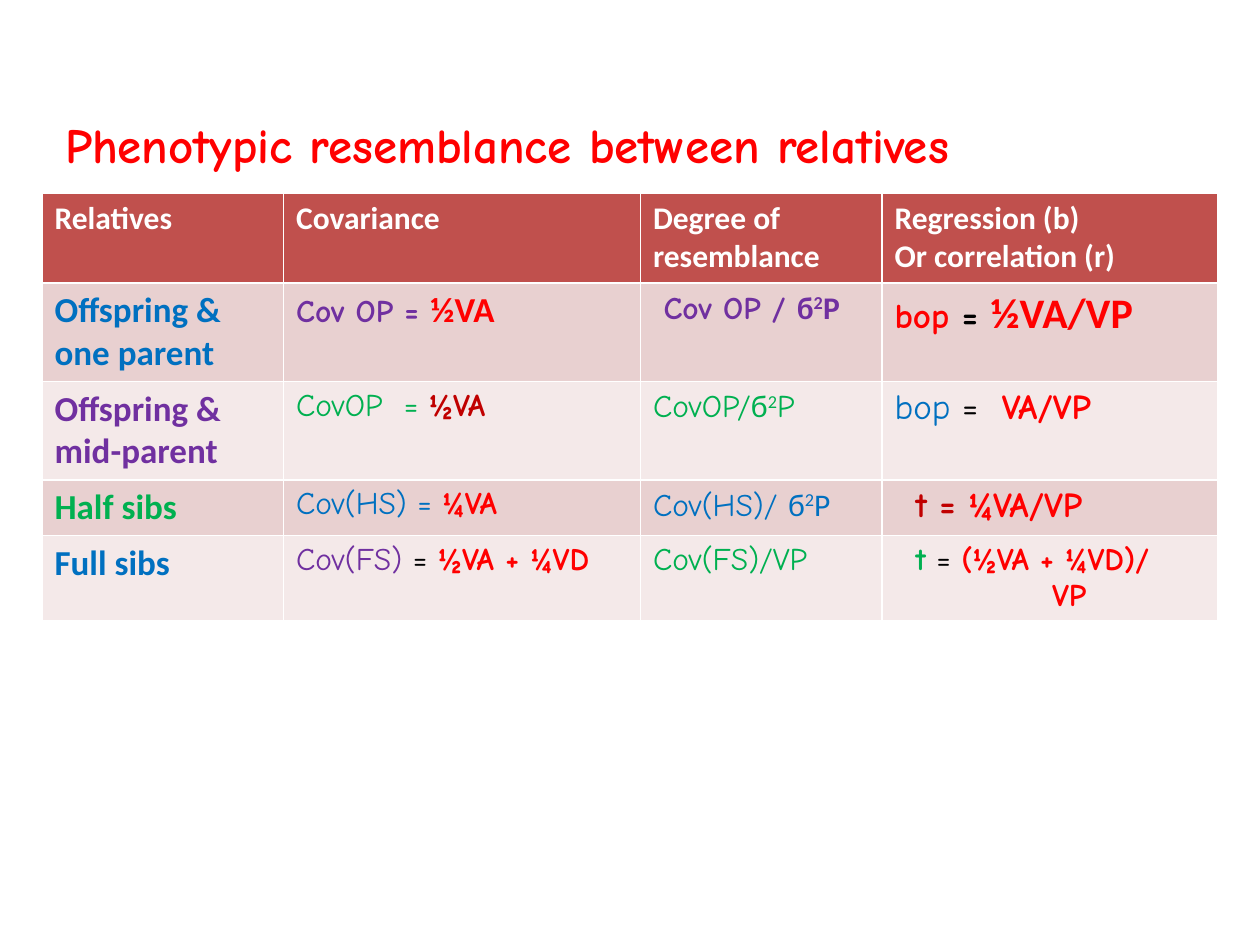
import pptx
import pptx.dml.color
import pptx.enum.text
import pptx.util

RED, DARK, BLUE = "FF0000", "C00000", "0070C0"
GREEN, PURPLE, BLACK, WHITE = "00B050", "7030A0", "000000", "FFFFFF"
HEAD, BANDS = "C0504D", ("E8D0D0", "F4E9E9")
COMIC, PLAIN = "Comic Neue", "Calibri"


def tint(code):
    return pptx.dml.color.RGBColor.from_string(code)


def bit(text, color, bold=False, size=18, face=COMIC, lift=0):
    """Describe one run; lift is its rise in percent."""
    return text, color, bold, size, face, lift


def label(text, color, size=20):
    return bit(text, color, True, size, PLAIN)


def sigma(color, bold=False, last=PLAIN):
    """Describe the runs of the phenotypic variance."""
    return [bit("б", color, bold, face=PLAIN),
            bit("2", color, bold, face=PLAIN, lift=30),
            bit("P", color, bold, face=last)]


class Deck:
    """Slide on a grid of twelve units to the inch."""

    def __init__(self, wide, high):
        self.show = pptx.Presentation()
        self.show.slide_width = self.unit(wide)
        self.show.slide_height = self.unit(high)
        self.slide = self.show.slides.add_slide(self.show.slide_layouts[5])

    def unit(self, count):
        return pptx.util.Inches(count / 12)

    def style(self, font, color, bold, size, face):
        font.name, font.size, font.bold = face, pptx.util.Pt(size), bold
        font.color.rgb = tint(color)

    def words(self, para, bits, inset=0):
        if inset:
            para._p.get_or_add_pPr().set("marL", str(self.unit(inset)))
        for text, *look, lift in bits:
            run = para.add_run()
            run.text = text
            self.style(para.font if len(bits) == 1 else run.font, *look)
            if lift:
                run._r.get_or_add_rPr().set("baseline", str(lift * 1000))

    def title(self, item, *box):
        shape = self.slide.shapes.title
        shape.left, shape.top, shape.width, shape.height = map(self.unit, box)
        frame = shape.text_frame
        frame.vertical_anchor = pptx.enum.text.MSO_ANCHOR.MIDDLE
        para = frame.paragraphs[0]
        para.alignment = pptx.enum.text.PP_ALIGN.LEFT
        self.words(para, [item])

    def table(self, left, top, cols, rows, cells):
        """Fill a table; each cell lists (inset, runs) per paragraph."""
        box = map(self.unit, (left, top, sum(cols), sum(rows)))
        table = self.slide.shapes.add_table(len(rows), len(cols), *box).table
        for col, wide in zip(table.columns, cols):
            col.width = self.unit(wide)
        for r, (high, line) in enumerate(zip(rows, cells)):
            table.rows[r].height = self.unit(high)
            for c, paras in enumerate(line):
                cell = table.cell(r, c)
                cell.fill.solid()
                cell.fill.fore_color.rgb = tint(BANDS[(r - 1) % 2] if r else HEAD)
                frame = cell.text_frame
                for n, (inset, bits) in enumerate(paras):
                    para = frame.add_paragraph() if n else frame.paragraphs[0]
                    self.words(para, bits, inset)


def cell(*bits, inset=0):
    return [(inset, bits)]


def heads(*lines):
    return [(0, [label(line, WHITE, 18)]) for line in lines]


CELLS = [
    [heads("Relatives"), heads("Covariance"), heads("Degree of resemblance"),
     heads("Regression (b)", "Or correlation (r)")],
    [cell(label("Offspring & one parent", BLUE)),
     cell(bit("Cov OP = ", PURPLE, True), label("½VA", RED)),
     cell(bit("Cov OP / ", PURPLE, True), *sigma(PURPLE, True), inset=1),
     cell(bit("bop", RED, True, 20), bit(" = ", BLACK, True, 20),
          label("½VA/VP", RED, 24))],
    [cell(label("Offspring & mid-parent", PURPLE)),
     cell(bit("CovOP  = ", GREEN), bit("½VA", DARK, True)),
     cell(bit("CovOP/", GREEN), *sigma(GREEN, last=COMIC)),
     cell(bit("bop", BLUE, size=20), bit(" =  ", BLACK, size=20),
          bit("VA/VP", RED, True, 20))],
    [cell(label("Half sibs", GREEN)),
     cell(bit("Cov(HS) = ", BLUE), bit("¼VA", RED, True)),
     cell(bit("Cov(HS)/ ", BLUE), *sigma(BLUE)),
     cell(bit("t = ", DARK, True, 20), bit("¼VA/VP", RED, True, 20), inset=2)],
    [cell(label("Full sibs", BLUE)),
     cell(bit("Cov(FS)", PURPLE), bit(" = ", BLACK),
          bit("½VA + ¼VD", RED, True)),
     cell(bit("Cov(FS)/VP", GREEN)),
     cell(bit("t", GREEN, True), bit(" = ", BLACK),
          bit("(½VA + ¼VD)/", RED, True), inset=2)
     + cell(bit("VP", RED, True), inset=15)],
]


def main():
    deck = Deck(120, 90)
    deck.title(bit("Phenotypic resemblance between relatives", RED, True, 28),
               5, 10, 108, 7.5)
    deck.table(4, 18.4, (23, 34, 23, 32), (8.4, 9.4, 9.4, 5.3, 8.1), CELLS)
    deck.show.save("out.pptx")


if __name__ == "__main__":
    main()
